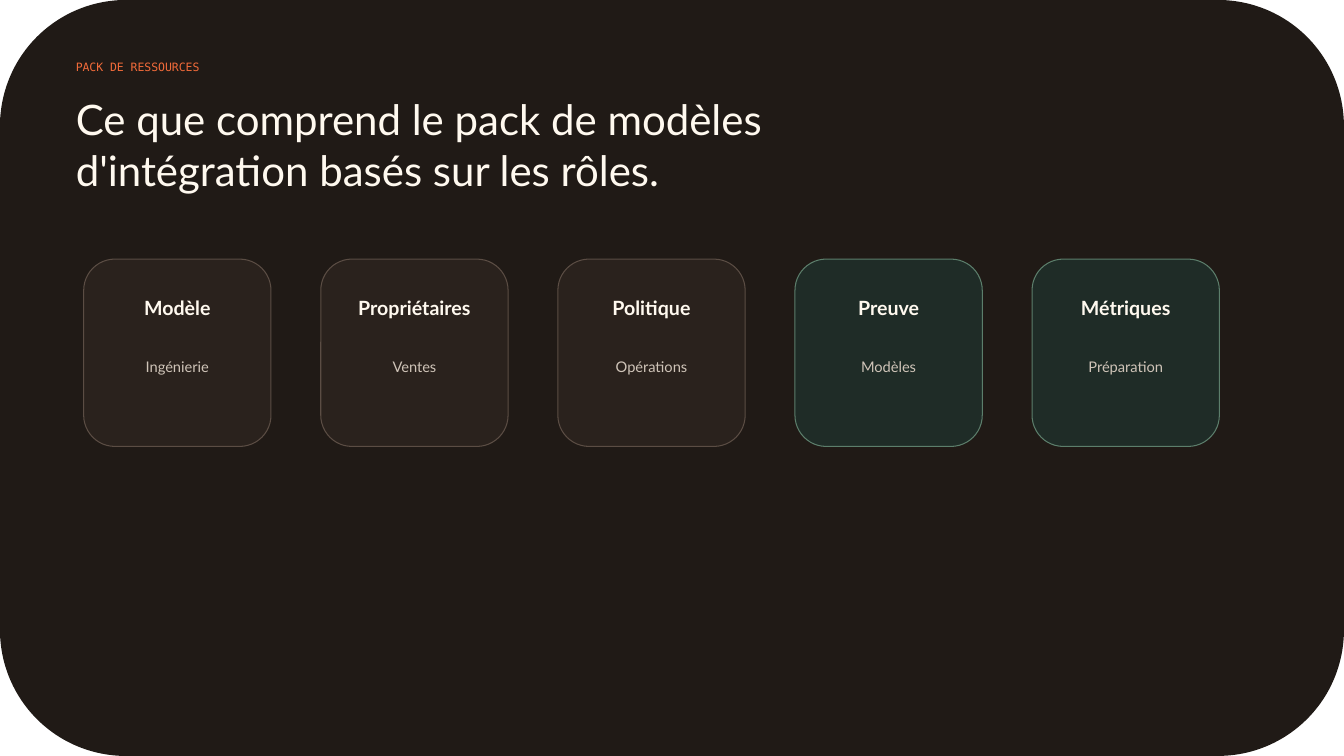
from pptx import Presentation
from pptx.dml.color import RGBColor
from pptx.enum.shapes import MSO_SHAPE
from pptx.enum.text import MSO_ANCHOR, MSO_AUTO_SIZE, PP_ALIGN
from pptx.util import Cm, Pt

COLORS = {
    "panel": "201A16",
    "accent": "F26B3A",
    "heading": "FFF9EF",
    "muted": "CFC4B8",
    "brown_fill": "2A221D",
    "brown_line": "5B4D44",
    "green_fill": "1F2C27",
    "green_line": "5C7E6B",
}
SANS = "Lato"
MONO = "DejaVu Sans Mono"

CARDS = [
    ("Modèle", "Ingénierie", "brown"),
    ("Propriétaires", "Ventes", "brown"),
    ("Politique", "Opérations", "brown"),
    ("Preuve", "Modèles", "green"),
    ("Métriques", "Préparation", "green"),
]
CARD_SIZE = Cm(4.72)


def color(name):
    return RGBColor.from_string(COLORS[name])


def write(shape, text, size, color_name, font_name=SANS, bold=False, align=PP_ALIGN.LEFT):
    frame = shape.text_frame
    frame.margin_left = frame.margin_right = frame.margin_top = frame.margin_bottom = 0
    frame.word_wrap = True
    frame.auto_size = MSO_AUTO_SIZE.NONE
    frame.vertical_anchor = MSO_ANCHOR.TOP
    frame.text = text
    paragraph = frame.paragraphs[0]
    paragraph.alignment = align
    font = paragraph.font
    font.name, font.size, font.bold = font_name, Pt(size), bold
    font.color.rgb = color(color_name)


def add_rounded_box(slide, left, top, width, height, fill, line=None):
    shape = slide.shapes.add_shape(MSO_SHAPE.ROUNDED_RECTANGLE, left, top, width, height)
    shape.shadow.inherit = False
    shape.fill.solid()
    shape.fill.fore_color.rgb = color(fill)
    if line:
        shape.line.color.rgb = color(line)
        shape.line.width = Pt(0.75)
    else:
        shape.line.fill.background()
    return shape


def add_header(slide, left, top, width):
    eyebrow = slide.shapes.add_textbox(left, top, Cm(11.66), Cm(0.71))
    write(eyebrow, "PACK DE RESSOURCES", 8.2, "accent", MONO)

    title = slide.shapes.title
    title.left, title.top = left, top + Cm(0.84)
    title.width, title.height = width, Cm(1.8)
    write(title, "Ce que comprend le pack de modèles d'intégration basés sur les rôles.", 30, "heading")


def add_card(slide, left, top, label, role, tone):
    add_rounded_box(slide, left, top, CARD_SIZE, CARD_SIZE, f"{tone}_fill", f"{tone}_line")
    # Both texts are centred across the card
    for text, offset, width, height, size, color_name, bold in (
        (label, Cm(0.92), Cm(3.78), Cm(0.84), 14, "heading", True),
        (role, Cm(2.5), Cm(3.94), Cm(1.45), 10.5, "muted", False),
    ):
        box = slide.shapes.add_textbox(left + (CARD_SIZE - width) // 2, top + offset, width, height)
        write(box, text, size, color_name, bold=bold, align=PP_ALIGN.CENTER)


def add_card_row(slide, left, top, width):
    step = (width - CARD_SIZE) // (len(CARDS) - 1)
    for index, card in enumerate(CARDS):
        add_card(slide, left + index * step, top, *card)


def main():
    presentation = Presentation()
    presentation.slide_width, presentation.slide_height = Cm(33.87), Cm(19.05)
    slide = presentation.slides.add_slide(presentation.slide_layouts[5])

    # Dark panel, placed behind the title
    panel = add_rounded_box(slide, 0, 0, presentation.slide_width, presentation.slide_height, "panel")
    slide.shapes.title.element.addprevious(panel.element)

    add_header(slide, Cm(1.91), Cm(1.52), Cm(21.11))
    add_card_row(slide, Cm(2.11), Cm(6.53), Cm(28.62))
    presentation.save("out.pptx")


if __name__ == "__main__":
    main()
